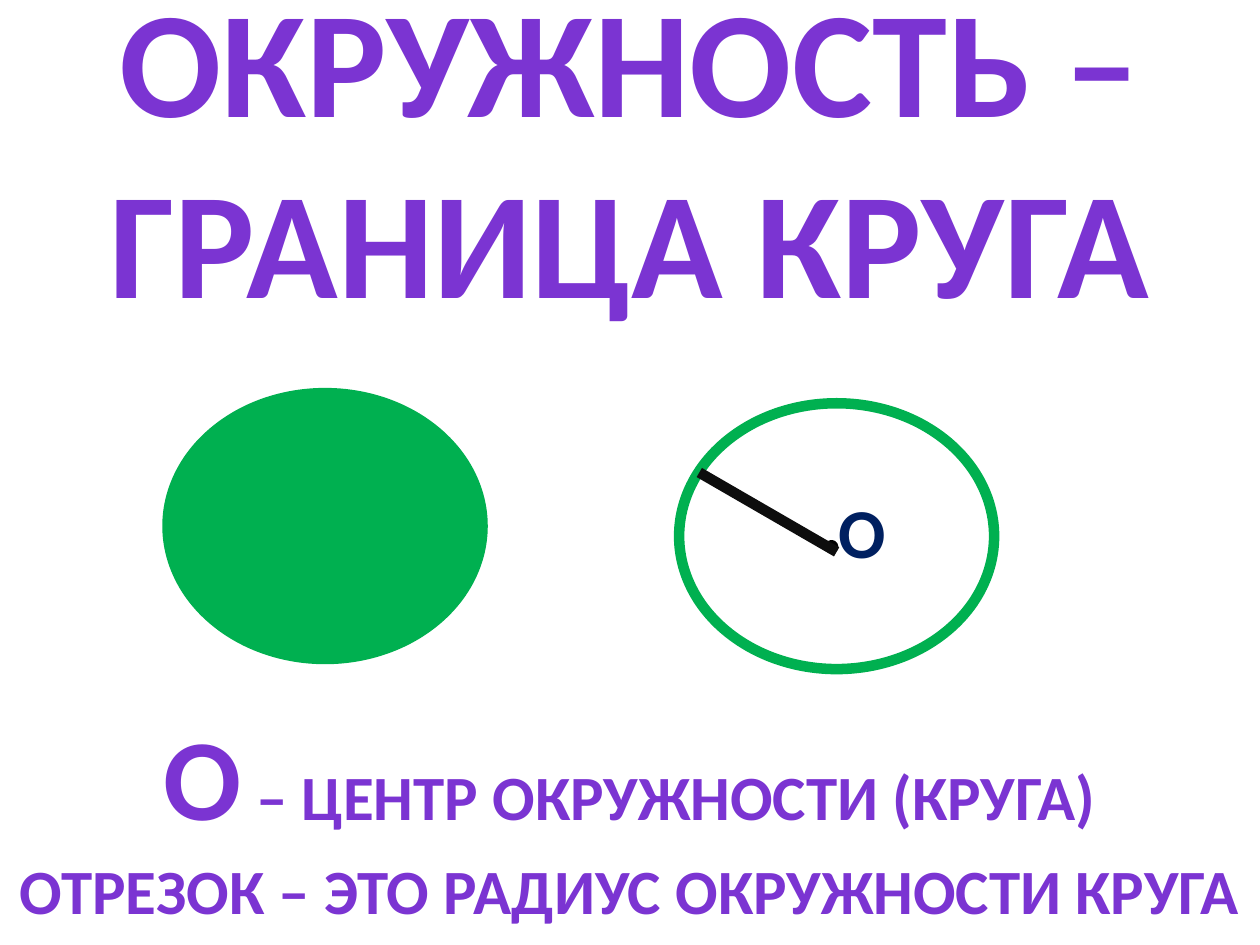
"""Build a slide that tells a circle's boundary from the disc it encloses."""
import pptx
import pptx.dml.color
import pptx.enum.shapes
import pptx.enum.text
import pptx.oxml
import pptx.util

THEME = {
    "font": "Calibri",
    "violet": "7B34D2", "green": "00B050", "navy": "002060",
    "black": "000000", "radius": "0D0D0D",
    "title": 86.4, "letter": 66, "label": 40, "body": 36,
    "thick": 6, "thin": 2,
}

presentation = pptx.Presentation()
presentation.slide_width = pptx.util.Inches(10)
presentation.slide_height = pptx.util.Inches(7.5)
column = presentation.slide_width / 100
row = presentation.slide_height / 100
slide = presentation.slides.add_slide(presentation.slide_layouts[5])


def place(left, top, width, height):
    return [int(left * column), int(top * row), int(width * column), int(height * row)]


def write(paragraph, text, size, color):
    run = paragraph.add_run()
    run.text = text
    font_format = {"name": THEME["font"], "size": pptx.util.Pt(THEME[size]), "bold": True}
    for name, value in font_format.items():
        setattr(run.font, name, value)
    run.font.color.rgb = pptx.dml.color.RGBColor.from_string(THEME[color])


title = slide.shapes.title
for name, value in zip(("left", "top", "width", "height"), place(0, 0, 100, 31.2)):
    setattr(title, name, value)
frame_format = {
    "word_wrap": True,
    "auto_size": pptx.enum.text.MSO_AUTO_SIZE.NONE,
    "vertical_anchor": pptx.enum.text.MSO_ANCHOR.MIDDLE,
}
for name, value in frame_format.items():
    setattr(title.text_frame, name, value)
heading = title.text_frame.paragraphs[0]
heading.alignment = pptx.enum.text.PP_ALIGN.CENTER
write(heading, "ОКРУЖНОСТЬ – ГРАНИЦА КРУГА", "title", "violet")

definitions = slide.shapes.add_textbox(*place(0, 74, 100, 26)).text_frame
definitions.word_wrap = True
definition_lines = [
    [("О", "letter"), (" – ЦЕНТР ОКРУЖНОСТИ (КРУГА)", "body")],
    [("ОТРЕЗОК – ЭТО РАДИУС ОКРУЖНОСТИ КРУГА", "body")],
]
for index, pieces in enumerate(definition_lines):
    paragraph = definitions.add_paragraph() if index else definitions.paragraphs[0]
    paragraph.alignment = pptx.enum.text.PP_ALIGN.CENTER
    paragraph.space_before = pptx.util.Pt(4)
    for text, size in pieces:
        write(paragraph, text, size, "violet")

disc = (13.3, 41.6, 25, 28.13)
ring = (53.9, 42.67, 25, 28.13)
center = (65.6, 57.33, 0.8, 1.07)
ellipses = [
    (disc, None, "green", "thick"),
    (disc, "green", "green", "thin"),
    (ring, None, "green", "thick"),
    (center, "black", "black", "thin"),
]
for box, fill, line, weight in ellipses:
    shape = slide.shapes.add_shape(pptx.enum.shapes.MSO_SHAPE.OVAL, *place(*box))
    shape.shadow.inherit = False
    if fill:
        shape.fill.solid()
        shape.fill.fore_color.rgb = pptx.dml.color.RGBColor.from_string(THEME[fill])
    else:
        shape.fill.background()
    shape.line.color.rgb = pptx.dml.color.RGBColor.from_string(THEME[line])
    shape.line.width = pptx.util.Pt(THEME[weight])

center_label = slide.shapes.add_textbox(*place(65.6, 51.07, 5.8, 10.27)).text_frame
center_label.word_wrap = False
center_label.auto_size = pptx.enum.text.MSO_AUTO_SIZE.SHAPE_TO_FIT_TEXT
write(center_label.paragraphs[0], "О", "label", "navy")

radius = slide.shapes.add_connector(
    pptx.enum.shapes.MSO_CONNECTOR.STRAIGHT, *place(66.4, 58.4, 55.5, 50)
)
radius.line.color.rgb = pptx.dml.color.RGBColor.from_string(THEME["radius"])
radius.line.width = pptx.util.Pt(THEME["thick"])
radius.element.spPr.append(pptx.oxml.parse_xml(
    '<a:effectLst xmlns:a="http://schemas.openxmlformats.org/drawingml/2006/main"/>'
))

presentation.save("out.pptx")
